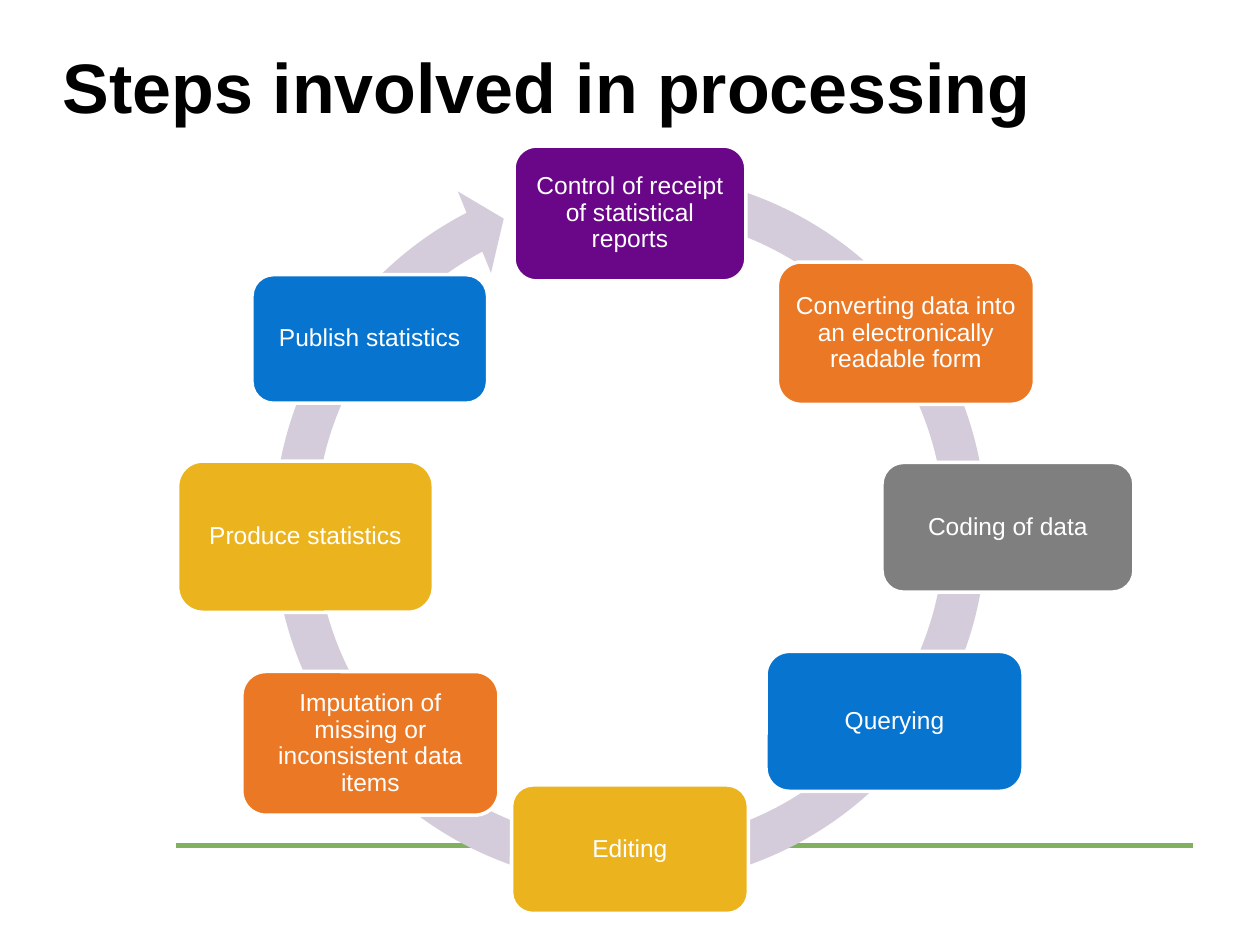
from dataclasses import dataclass

from lxml import etree
from pptx import Presentation
from pptx.dml.color import RGBColor
from pptx.enum.shapes import MSO_CONNECTOR, MSO_SHAPE
from pptx.enum.text import MSO_ANCHOR as ANCHOR, PP_ALIGN as ALIGN
from pptx.oxml.ns import qn
from pptx.util import Inches, Pt

PURPLE, YELLOW, BLUE = "6A0788", "EBB41F", "0774D0"
ORANGE, GRAY, GREEN = "EB7824", "7F7F7F", "82B061"
RING, WHITE, BLACK = "D4CCDA", "FFFFFF", "000000"


@dataclass
class Step:
    text: str
    left: float
    top: float
    width: float
    height: float
    color: str


STEPS = [
    Step("Control of receipt of statistical reports", 4.08, 1.16, 1.84, 1.07, PURPLE),
    Step("Converting data into an electronically readable form", 6.17, 2.08, 2.04, 1.13, ORANGE),
    Step("Coding of data", 7, 3.67, 2, 1.03, GRAY),
    Step("Querying", 6.08, 5.17, 2.04, 1.11, BLUE),
    Step("Editing", 4.06, 6.23, 1.88, 1.02, YELLOW),
    Step("Imputation of missing or inconsistent data items", 1.92, 5.33, 2.04, 1.14, ORANGE),
    Step("Produce statistics", 1.41, 3.66, 2.03, 1.2, YELLOW),
    Step("Publish statistics", 2, 2.18, 1.87, 1.02, BLUE),
]


def rgb(color: str) -> RGBColor:
    return RGBColor.from_string(color)


def add_text(sp, text: str, *, size: float, color: str, bold: bool = False,
             align=ALIGN.LEFT, anchor=ANCHOR.TOP, spacing: float = 1.0,
             inset: float = 0, inset_top: float = 0) -> None:
    tf = sp.text_frame
    tf.word_wrap = True
    tf.vertical_anchor = anchor
    tf.margin_left = tf.margin_right = tf.margin_bottom = Inches(inset)
    tf.margin_top = Inches(inset_top)
    p = tf.paragraphs[0]
    p.alignment = align
    p.line_spacing = spacing
    r = p.add_run()
    r.text = text
    r.font.name = "Arial"
    r.font.size = Pt(size)
    r.font.bold = bold
    r.font.color.rgb = rgb(color)


def add_rule(slide) -> None:
    line = slide.shapes.add_connector(
        MSO_CONNECTOR.STRAIGHT, Inches(1.4), Inches(6.71), Inches(9.47), Inches(6.71))
    line.line.color.rgb = rgb(GREEN)
    line.line.width = Pt(3)
    etree.SubElement(line._element.spPr, qn("a:effectLst"))


def add_ring(slide) -> None:
    sp = slide.shapes.add_shape(
        MSO_SHAPE.CIRCULAR_ARROW, Inches(1.99), Inches(1.19), Inches(6.02), Inches(6.02))
    for i, value in enumerate((0.055, 3.307, 145.415, 169.355, 0.058)):
        sp.adjustments[i] = value
    sp.shadow.inherit = False
    sp.fill.solid()
    sp.fill.fore_color.rgb = rgb(RING)
    sp.line.fill.background()


def add_step(slide, step: Step) -> None:
    sp = slide.shapes.add_shape(
        MSO_SHAPE.ROUNDED_RECTANGLE, Inches(step.left), Inches(step.top),
        Inches(step.width), Inches(step.height))
    sp.shadow.inherit = False
    sp.fill.solid()
    sp.fill.fore_color.rgb = rgb(step.color)
    sp.line.color.rgb = rgb(WHITE)
    sp.line.width = Pt(2)
    add_text(sp, step.text, size=14, color=WHITE, align=ALIGN.CENTER,
             anchor=ANCHOR.MIDDLE, spacing=0.9, inset=0.06, inset_top=0.06)


def main() -> None:
    prs = Presentation()
    prs.slide_width, prs.slide_height = Inches(10), Inches(7.5)
    slide = prs.slides.add_slide(prs.slide_layouts[6])
    add_rule(slide)
    title = slide.shapes.add_textbox(Inches(0.5), Inches(0.3), Inches(9), Inches(0.87))
    add_text(title, "Steps involved in processing", size=40, color=BLACK,
             bold=True, inset_top=0.05)
    add_ring(slide)
    for step in STEPS:
        add_step(slide, step)
    prs.save("out.pptx")


if __name__ == "__main__":
    main()
